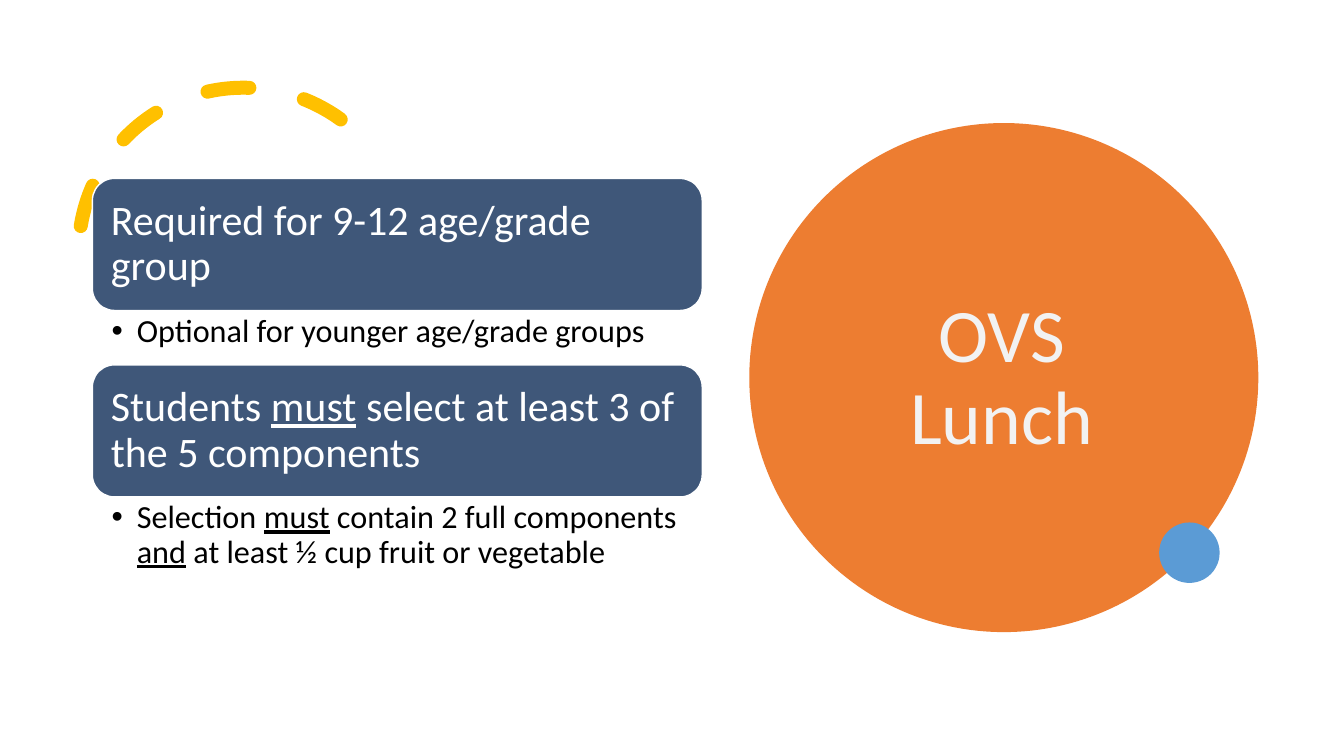
from dataclasses import dataclass
from typing import NamedTuple

from pptx import Presentation
from pptx.dml.color import RGBColor
from pptx.enum.dml import MSO_LINE
from pptx.enum.shapes import MSO_SHAPE
from pptx.enum.text import MSO_ANCHOR, MSO_AUTO_SIZE, PP_ALIGN
from pptx.util import Emu, Inches, Pt

COLUMNS, ROWS = 160, 90
CELL = Inches(1 / 12)
TWO_CONTENT_LAYOUT = 3
ARC, CARD, CIRCLE = MSO_SHAPE.ARC, MSO_SHAPE.ROUNDED_RECTANGLE, MSO_SHAPE.OVAL
MIDDLE, TOP = MSO_ANCHOR.MIDDLE, MSO_ANCHOR.TOP
LEFT, CENTER = PP_ALIGN.LEFT, PP_ALIGN.CENTER
NO_FIT = MSO_AUTO_SIZE.NONE
DASH = MSO_LINE.DASH


@dataclass(frozen=True)
class Theme:
    font: str = "Calibri"
    card: str = "3F5779"
    white: str = "FFFFFF"
    black: str = "000000"
    title: str = "F2F2F2"
    orange: str = "ED7D31"
    blue: str = "5B9BD5"
    gold: str = "FFC000"
    title_size: int = 54
    card_size: int = 30
    list_size: int = 23


class Area(NamedTuple):
    """Left, top, width and height in grid cells."""
    left: float
    top: float
    width: float
    height: float


class Rule(NamedTuple):
    """A heading card and the bullet under it; _underscores_ underline."""
    heading: str
    detail: str
    detail_rows: float


class Style(NamedTuple):
    size: int
    color: str
    align: PP_ALIGN
    anchor: MSO_ANCHOR
    margins: tuple[float, float, float, float]


THEME = Theme()
TITLE_STYLE = Style(THEME.title_size, THEME.title, CENTER, MIDDLE, (0.1, 0.05, 0.1, 0.05))
CARD_STYLE = Style(THEME.card_size, THEME.white, LEFT, MIDDLE, (0.12, 0.12, 0.12, 0.12))
LIST_STYLE = Style(THEME.list_size, THEME.black, LEFT, TOP, (0.19, 0.04, 0.23, 0.04))

RULES = [
    Rule("Required for 9-12 age/grade group",
         "Optional for younger age/grade groups", 6.48),
    Rule("Students _must_ select at least 3 of the 5 components",
         "Selection _must_ contain 2 full components _and_ at least ½ cup fruit or vegetable", 9.6),
]
RULES_LEFT, RULES_TOP, RULES_WIDTH, CARD_ROWS = 11, 21.24, 72.6, 15.72
ARC_AREA = Area(9.36, 10.44, 39.24, 39.24)
DISC_AREA = Area(89.2, 14.65, 60.6, 60.6)
DOT_AREA = Area(138, 62.2, 7.2, 7.2)
TITLE_AREA = Area(98, 18.4, 42.5, 53.4)


def set_all(target, values: dict) -> None:
    for name, value in values.items():
        setattr(target, name, value)


def place(shape, area: Area) -> None:
    lengths = (Emu(round(cells * CELL)) for cells in area)
    set_all(shape, dict(zip(("left", "top", "width", "height"), lengths)))


def add_plain_shape(page, kind: MSO_SHAPE, area: Area, fill: str | None = None):
    """Add a shape without shadow or outline."""
    shape = page.shapes.add_shape(kind, 0, 0, CELL, CELL)
    place(shape, area)
    shape.shadow.inherit = False
    shape.line.fill.background()
    if fill:
        shape.fill.solid()
        shape.fill.fore_color.rgb = RGBColor.from_string(fill)
    else:
        shape.fill.background()
    return shape


def set_line(shape, color: str, width: float) -> None:
    shape.line.color.rgb = RGBColor.from_string(color)
    shape.line.width = Pt(width)


def write(shape, text: str, style: Style):
    """Fill the shape with one paragraph and return that paragraph."""
    frame = shape.text_frame
    sides = ("margin_left", "margin_top", "margin_right", "margin_bottom")
    set_all(frame, dict(zip(sides, map(Inches, style.margins))))
    set_all(frame, {"word_wrap": True, "auto_size": NO_FIT, "vertical_anchor": style.anchor})
    para = frame.paragraphs[0]
    set_all(para, {"alignment": style.align, "line_spacing": 0.9, "space_before": Pt(0)})
    for line_number, line in enumerate(text.split("\n")):
        if line_number:
            para.add_line_break()
        for index, words in enumerate(line.split("_")):
            span = para.add_run()
            span.text = words
            set_all(span.font, {"name": THEME.font, "size": Pt(style.size),
                                "underline": index % 2 == 1})
            span.font.color.rgb = RGBColor.from_string(style.color)
    return para


def add_dashed_arc(page) -> None:
    arc = add_plain_shape(page, ARC, ARC_AREA)
    arc.adjustments[0], arc.adjustments[1] = 158.174, 17.814
    arc.rotation = 29.8
    arc.element.spPr.xfrm.set("flipH", "1")
    set_line(arc, THEME.gold, 10)
    arc.line.dash_style = DASH
    arc.element.spPr.ln.set("cap", "rnd")


def add_rules(page) -> None:
    top = RULES_TOP
    bodies = [box for box in page.placeholders if box.placeholder_format.idx in (1, 2)]
    for rule, body in zip(RULES, bodies):
        card = add_plain_shape(page, CARD, Area(RULES_LEFT, top, RULES_WIDTH, CARD_ROWS), THEME.card)
        set_line(card, THEME.white, 1)
        write(card, rule.heading, CARD_STYLE)
        top += CARD_ROWS
        place(body, Area(RULES_LEFT, top, RULES_WIDTH, rule.detail_rows))
        para = write(body, rule.detail, LIST_STYLE)
        properties = para._p.get_or_add_pPr()
        properties.set("marL", str(Inches(0.25)))
        properties.set("indent", str(-Inches(0.25)))
        top += rule.detail_rows


def add_title(page) -> None:
    add_plain_shape(page, CIRCLE, DISC_AREA, THEME.orange)
    add_plain_shape(page, CIRCLE, DOT_AREA, THEME.blue)
    title = page.shapes.title
    place(title, TITLE_AREA)
    write(title, "OVS\nLunch", TITLE_STYLE)
    title.element.getparent().append(title.element)  # bring in front of the disc


def main() -> None:
    deck = Presentation()
    set_all(deck, {"slide_width": COLUMNS * CELL, "slide_height": ROWS * CELL})
    page = deck.slides.add_slide(deck.slide_layouts[TWO_CONTENT_LAYOUT])
    add_dashed_arc(page)
    add_rules(page)
    add_title(page)
    deck.save("out.pptx")


if __name__ == "__main__":
    main()
